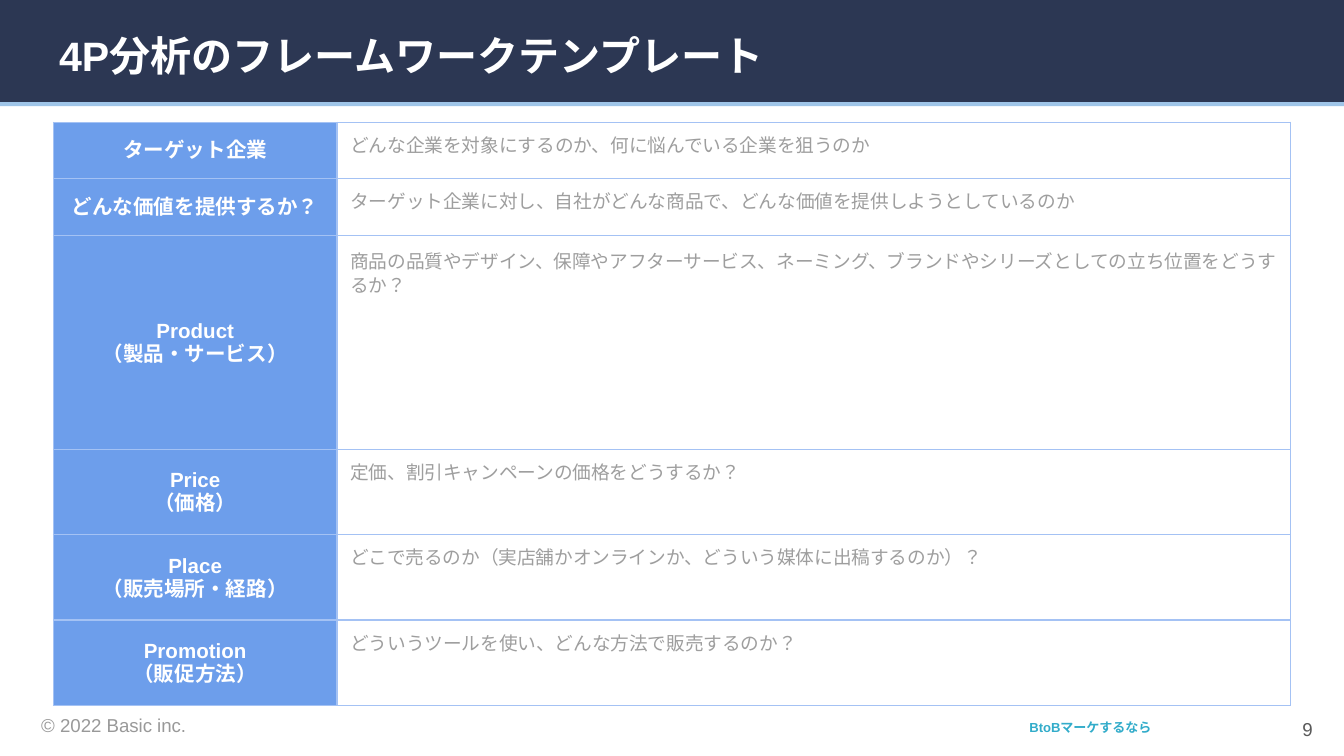
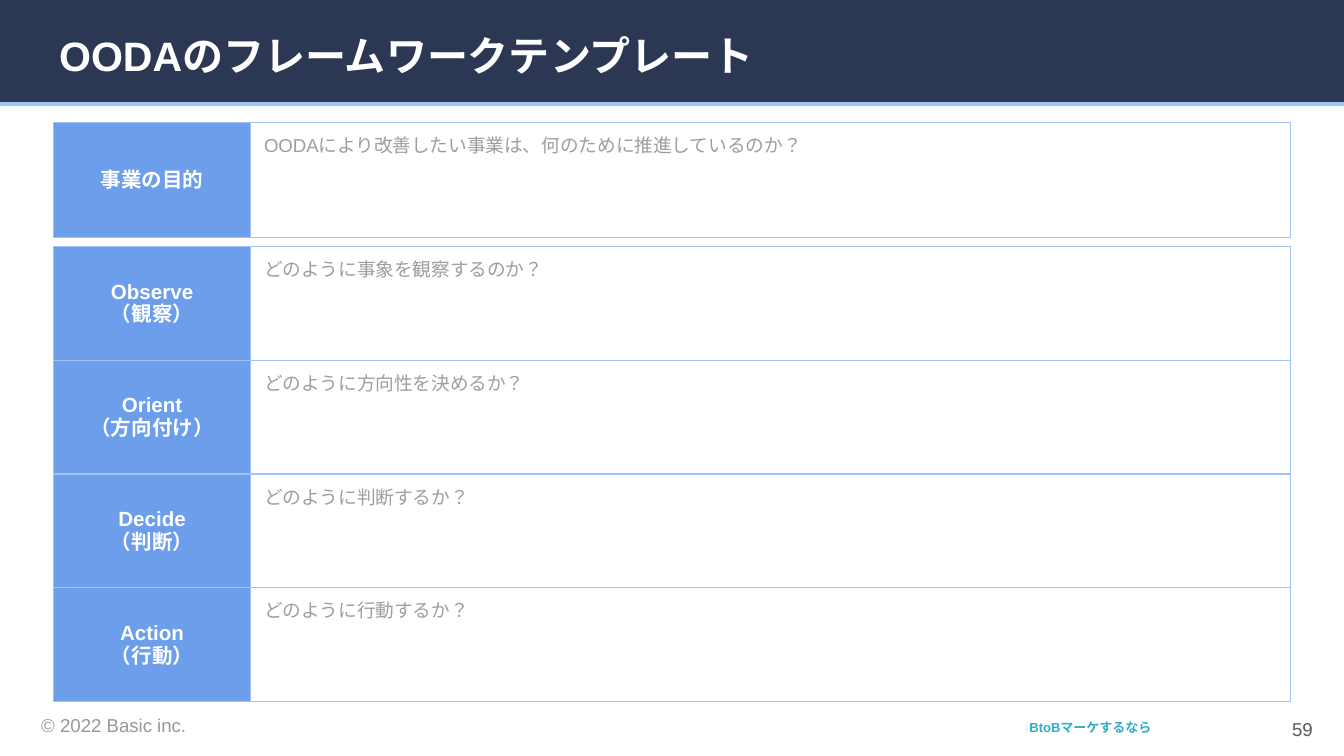
from lxml import etree
from pptx import Presentation
from pptx.dml.color import RGBColor
from pptx.enum import lang, shapes, text
from pptx.oxml import ns
from pptx.util import Cm, Pt

COLORS = {
    "band": "2C3753", "rule": "9FC5E8", "label": "6D9EEB", "border": "A4C2F4",
    "white": "FFFFFF", "hint": "9E9E9E", "copyright": "999999",
    "tagline": "32ACCA", "number": "595959",
}
FONT = "Arial"
INSET = Cm(0.25)
TABLE_LEFT, TABLE_WIDTH, FRAME_SIDE = 1.01, 23.38, 8.33
LEFT, CENTER, RIGHT = text.PP_ALIGN.LEFT, text.PP_ALIGN.CENTER, text.PP_ALIGN.RIGHT
TOP, MIDDLE = text.MSO_ANCHOR.TOP, text.MSO_ANCHOR.MIDDLE

# Each table: top, label column width, rows of (height, label lines, hint, line spacing)
SLIDES = [
    ("4P分析のフレームワークテンプレート", "9", [
        (2.31, 5.36, [
            (1.07, ["ターゲット企業"],
             "どんな企業を対象にするのか、何に悩んでいる企業を狙うのか", None),
            (1.07, ["どんな価値を提供するか？"],
             "ターゲット企業に対し、自社がどんな商品で、どんな価値を提供しようとしているのか", None),
            (4.05, ["Product", "（製品・サービス）"],
             "商品の品質やデザイン、保障やアフターサービス、ネーミング、"
             "ブランドやシリーズとしての立ち位置をどうするか？", 1.15),
            (1.61, ["Price", "（価格）"],
             "定価、割引キャンペーンの価格をどうするか？", None),
            (1.61, ["Place", "（販売場所・経路）"],
             "どこで売るのか（実店舗かオンラインか、どういう媒体に出稿するのか）？", None),
            (1.61, ["Promotion", "（販促方法）"],
             "どういうツールを使い、どんな方法で販売するのか？", None),
        ]),
    ]),
    ("OODAのフレームワークテンプレート", "59", [
        (2.32, 3.73, [
            (2.17, ["事業の目的"],
             "OODAにより改善したい事業は、何のために推進しているのか？", None),
        ]),
        (4.66, 3.73, [
            (2.15, ["Observe", "（観察）"], "どのように事象を観察するのか？", None),
            (2.15, ["Orient", "（方向付け）"], "どのように方向性を決めるか？", None),
            (2.15, ["Decide", "（判断）"], "どのように判断するか？", None),
            (2.15, ["Action", "（行動）"], "どのように行動するか？", None),
        ]),
    ]),
]


def write(frame, lines, size, color, bold=False, align=LEFT, spacing=None):
    for i, line in enumerate(lines):
        paragraph = frame.paragraphs[0] if i == 0 else frame.add_paragraph()
        paragraph.alignment = align
        if spacing:
            paragraph.line_spacing = spacing
        run = paragraph.add_run()
        run.text = line
        run.font.name = FONT
        run.font.size = Pt(size)
        run.font.bold = bold
        run.font.color.rgb = RGBColor.from_string(COLORS[color])
        run.font.language_id = lang.MSO_LANGUAGE_ID.JAPANESE
        # Japanese glyphs take the same typeface as Latin ones
        for script in ("ea", "cs"):
            etree.SubElement(run.font._element, ns.qn(f"a:{script}"), typeface=FONT)


def border(cell):
    properties = cell._tc.get_or_add_tcPr()
    for i, side in enumerate(("lnL", "lnR", "lnT", "lnB")):
        line = etree.Element(ns.qn(f"a:{side}"), w=str(Pt(0.75)))
        fill = etree.SubElement(line, ns.qn("a:solidFill"))
        etree.SubElement(fill, ns.qn("a:srgbClr"), val=COLORS["border"])
        properties.insert(i, line)


prs = Presentation()
prs.slide_width, prs.slide_height = Cm(25.4), Cm(14.29)

for title, number, tables in SLIDES:
    slide = prs.slides.add_slide(prs.slide_layouts[6])

    # Header band and the rule below it
    for top, height, color in [(-0.05, 1.98, "band"), (1.93, 0.08, "rule")]:
        band = slide.shapes.add_shape(shapes.MSO_SHAPE.RECTANGLE,
                                      Cm(-0.03), Cm(top), Cm(25.5), Cm(height))
        band.shadow.inherit = False
        band.fill.solid()
        band.fill.fore_color.rgb = RGBColor.from_string(COLORS[color])
        band.line.fill.background()

    # Title and footer
    for words, box, size, color, bold, align, anchor in [
        (title, (0.87, 0.32, 23.67, 1.6), 22, "white", True, LEFT, TOP),
        ("©️ 2022 Basic inc.", (0.53, 13.28, 4.22, 0.91), 10, "copyright", False, LEFT, TOP),
        ("BtoBマーケするなら", (19.04, 13.46, 2.97, 0.91), 7, "tagline", True, RIGHT, TOP),
        (number, (23.54, 13.23, 1.52, 1.09), 10, "number", False, RIGHT, MIDDLE),
    ]:
        frame = slide.shapes.add_textbox(*map(Cm, box)).text_frame
        frame.word_wrap = True
        frame.vertical_anchor = anchor
        frame.margin_left = frame.margin_right = INSET
        frame.margin_top = frame.margin_bottom = INSET
        write(frame, [words], size, color, bold, align)

    # Framework tables
    for top, label_width, rows in tables:
        holder = slide.shapes.add_table(len(rows), 2, Cm(TABLE_LEFT), Cm(top),
                                        Cm(FRAME_SIDE), Cm(FRAME_SIDE))
        framework = holder.table
        framework.first_row = framework.horz_banding = False
        framework.columns[0].width = Cm(label_width)
        framework.columns[1].width = Cm(TABLE_WIDTH - label_width)
        for i, (row_height, label_lines, hint, spacing) in enumerate(rows):
            framework.rows[i].height = Cm(row_height)
            label, answer = framework.cell(i, 0), framework.cell(i, 1)
            for cell in (label, answer):
                cell.margin_left = cell.margin_right = INSET
                cell.margin_top = cell.margin_bottom = INSET
                border(cell)
            label.vertical_anchor = MIDDLE
            label.fill.solid()
            label.fill.fore_color.rgb = RGBColor.from_string(COLORS["label"])
            answer.vertical_anchor = TOP
            answer.fill.background()
            write(label.text_frame, label_lines, 11, "white", True, CENTER)
            write(answer.text_frame, [hint], 10, "hint", spacing=spacing)
        holder.width = holder.height = Cm(FRAME_SIDE)

prs.save("out.pptx")
